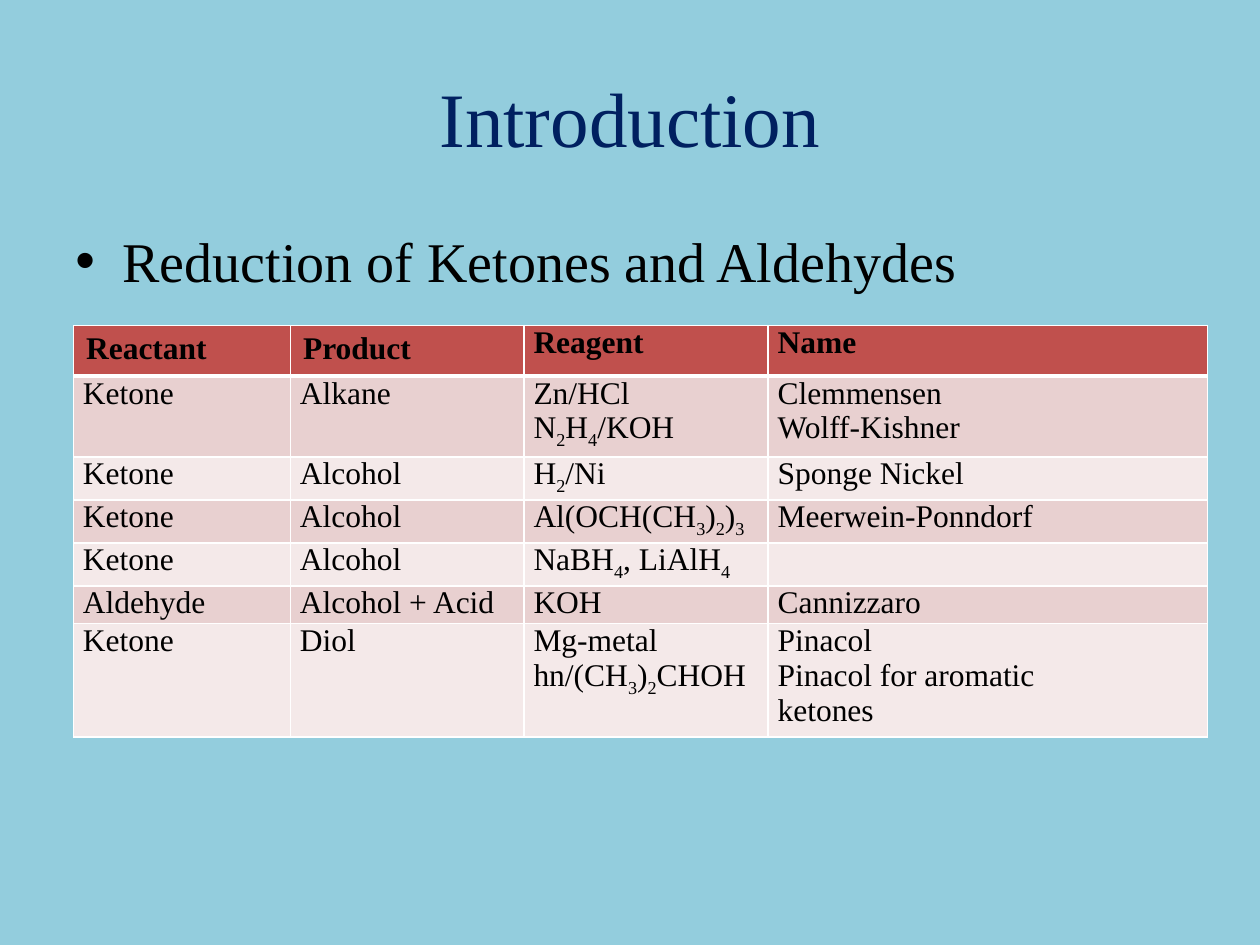
from itertools import groupby

from lxml import etree
from pptx import Presentation
from pptx.dml.color import RGBColor
from pptx.enum.text import MSO_ANCHOR, PP_ALIGN
from pptx.oxml.ns import qn
from pptx.util import Pt

CENTER = PP_ALIGN.CENTER
MIDDLE = MSO_ANCHOR.MIDDLE
TITLE_ONLY = 5
FONT = "Times New Roman"
COLORS = {
    "background": "93CDDD",
    "title": "002060",
    "text": "000000",
    "header": "C0504D",
    "odd": "E8D0D0",
    "even": "F4E9E9",
    "border": "FFFFFF",
}

COL_WIDTHS = [124, 133.5, 139.5, 251]
ROW_HEIGHTS = [28.5, 42.5, 21.6, 21.6, 21.6, 21.6, 45]
# Each "\n" starts a paragraph, each "\v" a line; digits are subscripts
ROWS = [
    ["Reactant", "Product", "Reagent", "Name"],
    ["Ketone", "Alkane", "Zn/HCl\nN2H4/KOH", "Clemmensen \vWolff-Kishner"],
    ["Ketone", "Alcohol", "H2/Ni", "Sponge Nickel"],
    ["Ketone", "Alcohol", "Al(OCH(CH3)2)3", "Meerwein-Ponndorf"],
    ["Ketone", "Alcohol", "NaBH4, LiAlH4", ""],
    ["Aldehyde", "Alcohol + Acid", "KOH", "Cannizzaro"],
    ["Ketone", "Diol", "Mg-metal\nhn/(CH3)2CHOH",
     "Pinacol\nPinacol for aromatic ketones"],
]


def rgb(name):
    return RGBColor.from_string(COLORS[name])


def set_font(p, size, color="text", bold=False):
    p.font.name = FONT
    p.font.size = Pt(size)
    p.font.bold = bold
    p.font.color.rgb = rgb(color)


def add_title(s, text):
    title = s.shapes.title
    title.left, title.top, title.width, title.height = Pt(36), Pt(21.6), Pt(648), Pt(90)
    tf = title.text_frame
    tf.text = text
    tf.vertical_anchor = MIDDLE
    p = tf.paragraphs[0]
    p.alignment = CENTER
    set_font(p, 44, "title")


def add_bullet(s, text):
    tf = s.shapes.add_textbox(Pt(36), Pt(126), Pt(648), Pt(356.4)).text_frame
    tf.word_wrap = True
    p = tf.paragraphs[0]
    p.text = text
    p.space_before = Pt(6.4)
    set_font(p, 32)
    pPr = p._p.get_or_add_pPr()
    pPr.set("marL", str(Pt(27)))
    pPr.set("indent", str(Pt(-27)))
    bullet_font = etree.Element(qn("a:buFont"), typeface="Arial")
    bullet = etree.Element(qn("a:buChar"), char="•")
    pPr.find(qn("a:spcBef")).addnext(bullet_font)
    bullet_font.addnext(bullet)


def write_formula(p, text):
    for n, line in enumerate(text.split("\v")):
        if n:
            p.add_line_break()
        for is_digit, chars in groupby(line, str.isdigit):
            r = p.add_run()
            r.text = "".join(chars)
            if is_digit:
                r.font._element.set("baseline", "-25000")


def set_borders(cell, bottom):
    tcPr = cell._tc.get_or_add_tcPr()
    widths = {"a:lnL": 1, "a:lnR": 1, "a:lnT": 1, "a:lnB": bottom}
    for n, (tag, width) in enumerate(widths.items()):
        ln = etree.Element(qn(tag), w=str(Pt(width)))
        fill = etree.SubElement(ln, qn("a:solidFill"))
        etree.SubElement(fill, qn("a:srgbClr"), val=COLORS["border"])
        tcPr.insert(n, ln)


def fill_cell(cell, text, row, col):
    header = row == 0
    # The first two headings keep the default margins
    if not header or col > 1:
        cell.margin_left = cell.margin_right = Pt(5.4)
        cell.margin_top = cell.margin_bottom = 0
    tf = cell.text_frame
    for n, part in enumerate(text.split("\n")):
        p = tf.add_paragraph() if n else tf.paragraphs[0]
        write_formula(p, part)
        set_font(p, 18, bold=header)
    cell.fill.solid()
    cell.fill.fore_color.rgb = rgb("header" if header else "odd" if row % 2 else "even")
    set_borders(cell, 3 if header else 1)


def add_reaction_table(s):
    table = s.shapes.add_table(len(ROWS), len(COL_WIDTHS), Pt(42), Pt(186),
                               Pt(sum(COL_WIDTHS)), Pt(sum(ROW_HEIGHTS))).table
    for column, width in zip(table.columns, COL_WIDTHS):
        column.width = Pt(width)
    for row, height in zip(table.rows, ROW_HEIGHTS):
        row.height = Pt(height)
    for i, texts in enumerate(ROWS):
        for j, text in enumerate(texts):
            fill_cell(table.cell(i, j), text, i, j)
    # A wide right margin wraps the last name before "ketones"
    table.cell(len(ROWS) - 1, 3).margin_right = Pt(72)


def main():
    prs = Presentation()
    prs.slide_width, prs.slide_height = Pt(720), Pt(540)
    s = prs.slides.add_slide(prs.slide_layouts[TITLE_ONLY])
    s.background.fill.solid()
    s.background.fill.fore_color.rgb = rgb("background")
    add_title(s, "Introduction")
    add_bullet(s, "Reduction of Ketones and Aldehydes")
    add_reaction_table(s)
    prs.save("out.pptx")


if __name__ == "__main__":
    main()
